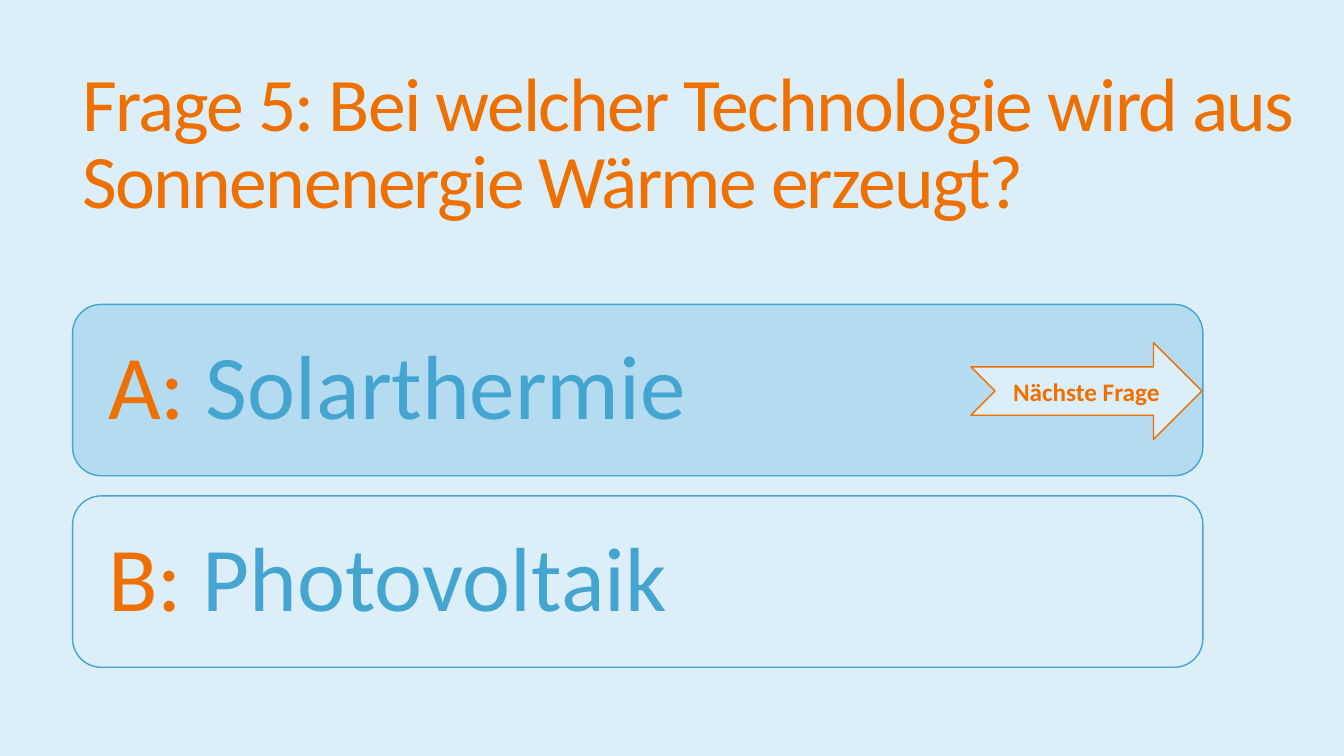
from pptx import Presentation
from pptx.dml.color import RGBColor
from pptx.enum.shapes import MSO_SHAPE as SHAPE
from pptx.enum.text import MSO_ANCHOR as ANCHOR, MSO_AUTO_SIZE as AUTO, PP_ALIGN as ALIGN
from pptx.util import Inches, Pt

PALE = RGBColor(0xDC, 0xEE, 0xF8)
SKY = RGBColor(0xB5, 0xDB, 0xF0)
BLUE = RGBColor(0x44, 0xA5, 0xD0)
ORANGE = RGBColor(0xED, 0x70, 0x00)


def add_run(p, text, size, color, bold=False):
    """Append a Calibri run to a paragraph and return it."""
    r = p.add_run()
    r.text = text
    for name, value in {"name": "Calibri", "size": Pt(size), "bold": bold}.items():
        setattr(r.font, name, value)
    r.font.color.rgb = color
    return r


def set_frame(tf, **extra):
    """Format a wrapped, vertically centred text frame."""
    formats = {"word_wrap": True, "auto_size": AUTO.NONE, "vertical_anchor": ANCHOR.MIDDLE}
    for name, value in {**formats, **extra}.items():
        setattr(tf, name, value)


def add_box(s, kind, box, fill, line):
    """Add a flat filled shape with a thin outline."""
    sp = s.shapes.add_shape(kind, *map(Inches, box))
    sp.shadow.inherit = False
    sp.fill.solid()
    sp.fill.fore_color.rgb = fill
    sp.line.color.rgb = line
    sp.line.width = Pt(1)
    return sp


def add_question(s, box, text):
    """Place the question in the title placeholder."""
    sp = s.shapes.title
    for name, value in zip(("left", "top", "width", "height"), box):
        setattr(sp, name, Inches(value))
    set_frame(sp.text_frame)
    p = sp.text_frame.paragraphs[0]
    p.alignment = ALIGN.LEFT
    p.line_spacing = 0.85
    r = add_run(p, text, 54, ORANGE)
    r.font._element.set("spc", "-120")


def add_answers(s, box, answers, gap=0.2):
    """Stack one rounded card per answer in the box."""
    x, y, w, h = box
    card_h = (h - gap * (len(answers) - 1)) / len(answers)
    for i, (letter, text, fill) in enumerate(answers):
        card = (x, y + i * (card_h + gap), w, card_h)
        sp = add_box(s, SHAPE.ROUNDED_RECTANGLE, card, fill, BLUE)
        sides = ("left", "top", "right", "bottom")
        set_frame(sp.text_frame, **{f"margin_{side}": Inches(0.27) for side in sides})
        p = sp.text_frame.paragraphs[0]
        p.alignment = ALIGN.LEFT
        p.line_spacing = 0.9
        add_run(p, f"{letter}: ", 65, ORANGE)
        add_run(p, text, 65, BLUE)


def add_next_arrow(s, box, text):
    """Add the arrow that leads to the next question."""
    sp = add_box(s, SHAPE.NOTCHED_RIGHT_ARROW, box, PALE, ORANGE)
    set_frame(sp.text_frame)
    p = sp.text_frame.paragraphs[0]
    p.alignment = ALIGN.CENTER
    add_run(p, text, 18, ORANGE, bold=True)


def main():
    """Build and save the quiz slide."""
    prs = Presentation()
    prs.slide_width, prs.slide_height = Inches(13.33), Inches(7.5)
    s = prs.slides.add_slide(prs.slide_layouts.get_by_name("Title Only"))
    s.background.fill.solid()
    s.background.fill.fore_color.rgb = PALE
    add_question(s, (0.72, 0.55, 12.45, 1.81),
                 "Frage 5: Bei welcher Technologie wird aus Sonnenenergie Wärme erzeugt?")
    add_answers(s, (0.72, 3.02, 11.21, 3.6),
                [("A", "Solarthermie", SKY), ("B", "Photovoltaik", PALE)])
    add_next_arrow(s, (9.63, 3.4, 2.29, 0.96), "Nächste Frage")
    prs.save("out.pptx")


if __name__ == "__main__":
    main()
